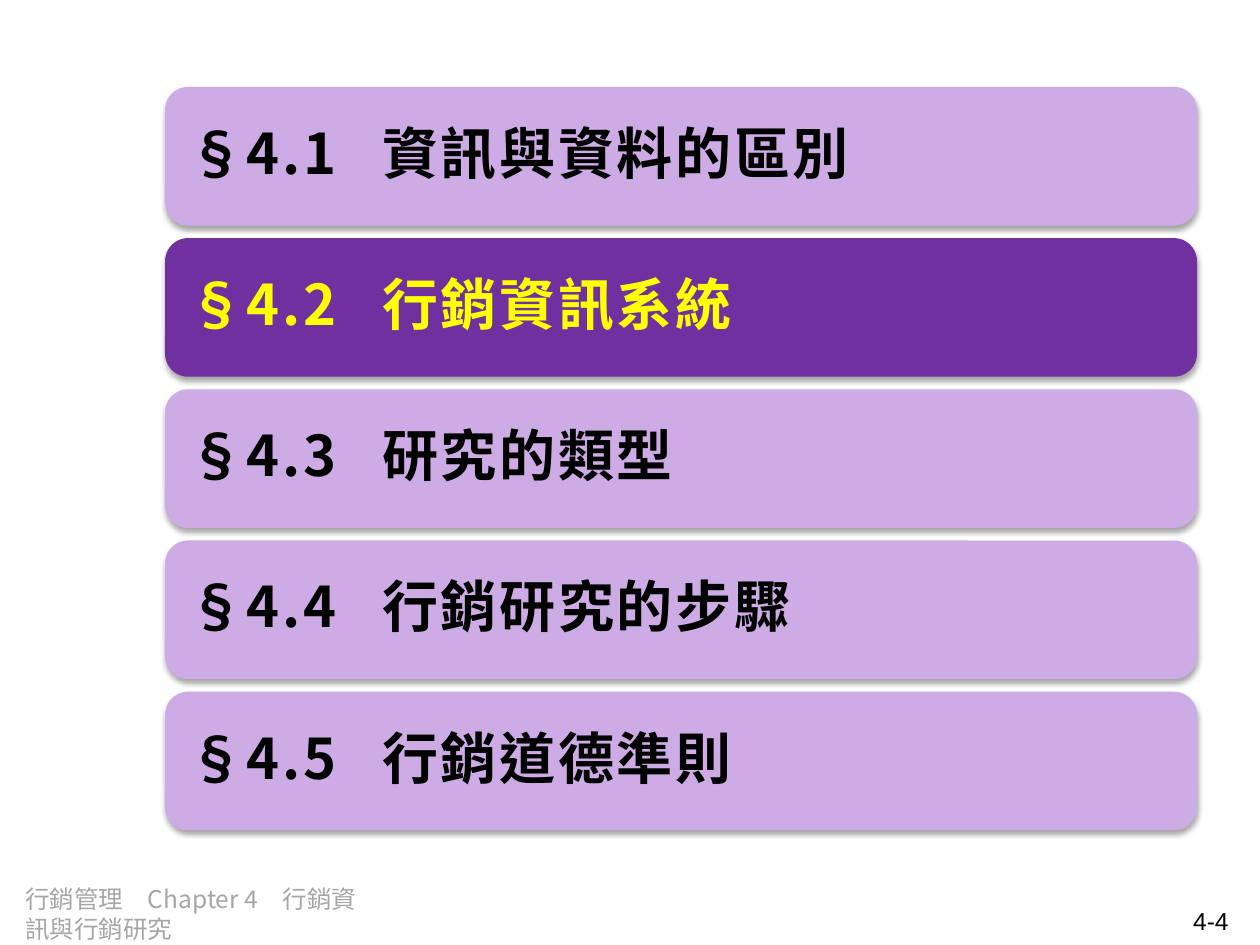
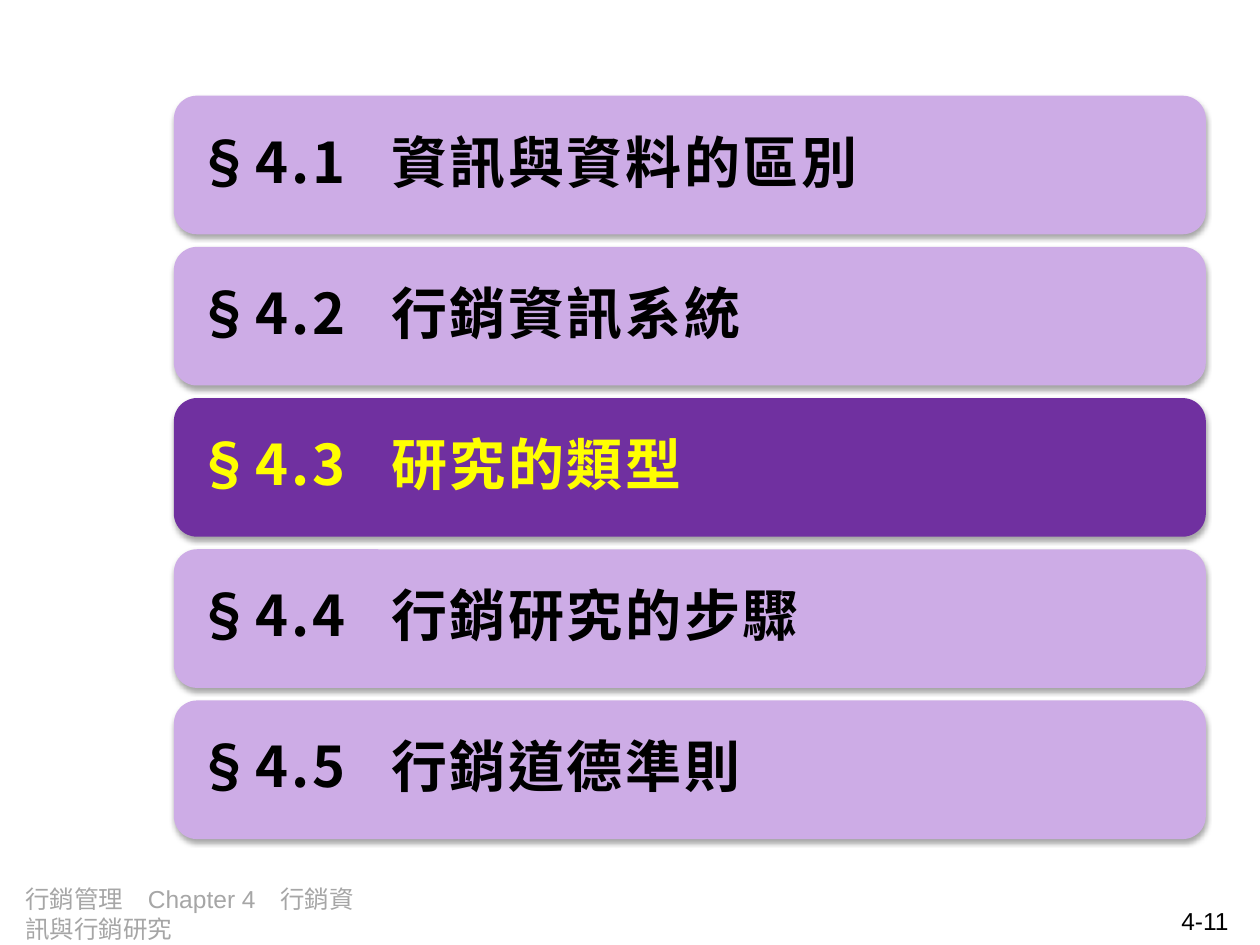
from dataclasses import dataclass

from lxml import etree
from pptx import Presentation
from pptx.dml.color import RGBColor
from pptx.enum import shapes, text
from pptx.oxml.ns import qn
from pptx.util import Inches, Pt


@dataclass(frozen=True)
class Theme:
    bar: str = "CDACE6"
    bar_current: str = "7030A0"
    ink: str = "000000"
    ink_current: str = "FFFF00"
    footer: str = "A6A6A6"
    cjk: str = "Noto Sans CJK SC"
    latin: str = "Arial"
    section_size: int = 32
    footer_size: int = 14


THEME = Theme()
SECTIONS = ["資訊與資料的區別", "行銷資訊系統", "研究的類型", "行銷研究的步驟", "行銷道德準則"]
FOOTER = "行銷管理　Chapter 4　行銷資訊與行銷研究"
BAR_WIDTH, BAR_HEIGHT, BAR_PITCH = 8.19, 1.1, 1.2
TITLE_TAB = 1.54


def add_child(parent, tag, **attributes):
    child = etree.SubElement(parent, qn(tag))
    for name, value in attributes.items():
        child.set(name, str(value))
    return child


def write(frame, words, size, color, font=THEME.latin, bold=False,
          align=text.PP_ALIGN.LEFT, tracking=None, tab=None):
    """Fill the first paragraph of a frame; tracking in points, tab in inches."""
    frame.word_wrap = True
    paragraph = frame.paragraphs[0]
    paragraph.alignment = align
    if tab:
        tabs = add_child(paragraph._p.get_or_add_pPr(), "a:tabLst")
        add_child(tabs, "a:tab", pos=Inches(tab), algn="l")
    run = paragraph.add_run()
    run.text = words
    run.font.size = Pt(size)
    run.font.bold = bold
    run.font.color.rgb = RGBColor.from_string(color)
    run.font.name = font
    properties = run._r.get_or_add_rPr()
    properties.set("lang", "zh-TW")
    if tracking:
        properties.set("spc", str(int(tracking * 100)))
    add_child(properties, "a:ea", typeface=THEME.cjk)
    return paragraph


def add_soft_shadow(shape):
    shape.shadow.inherit = False
    effects = shape._element.spPr.find(qn("a:effectLst"))
    shadow = add_child(effects, "a:outerShdw", blurRad=Pt(3.1), dist=Pt(1.8),
                       dir=90 * 60000, rotWithShape=0)
    black = add_child(shadow, "a:srgbClr", val="000000")
    add_child(black, "a:alpha", val=35000)


def add_section_bar(slide, left, top, words, current):
    bar = slide.shapes.add_shape(shapes.MSO_SHAPE.ROUNDED_RECTANGLE, Inches(left),
                                 Inches(top), Inches(BAR_WIDTH), Inches(BAR_HEIGHT))
    bar.fill.solid()
    bar.fill.fore_color.rgb = RGBColor.from_string(
        THEME.bar_current if current else THEME.bar)
    bar.line.fill.background()
    add_soft_shadow(bar)
    frame = bar.text_frame
    frame.vertical_anchor = text.MSO_ANCHOR.MIDDLE
    frame.margin_left = frame.margin_right = Inches(0.13)
    paragraph = write(frame, words, THEME.section_size,
                      THEME.ink_current if current else THEME.ink, font=THEME.cjk,
                      bold=True, tracking=1.5, tab=TITLE_TAB)
    paragraph.line_spacing = 0.9
    paragraph.space_after = Pt(4)


def add_agenda(slide, left, top, current):
    for index, section in enumerate(SECTIONS):
        number = index + 1
        add_section_bar(slide, left, top + index * BAR_PITCH,
                        f"§4.{number}\t{section}", number == current)


def add_footer(slide, page, font):
    def place(left, top, width, words, color, **style):
        box = slide.shapes.add_textbox(Inches(left), Inches(top),
                                       Inches(width), Inches(0.29))
        write(box.text_frame, words, THEME.footer_size, color, **style)

    place(0.1, 6.97, 2.85, FOOTER, THEME.footer, font=font)
    place(7.52, 7.14, 2.33, page, THEME.ink, align=text.PP_ALIGN.RIGHT)


def add_agenda_slide(deck, left, top, current, page, footer_font):
    slide = deck.slides.add_slide(deck.slide_layouts[6])
    add_footer(slide, page, footer_font)
    add_agenda(slide, left, top, current)


def main():
    deck = Presentation()
    deck.slide_width, deck.slide_height = Inches(10), Inches(7.5)
    add_agenda_slide(deck, 1.31, 0.69, current=2, page="4-4", footer_font=THEME.cjk)
    add_agenda_slide(deck, 1.38, 0.76, current=3, page="4-11", footer_font=THEME.latin)
    deck.save("out.pptx")


if __name__ == "__main__":
    main()
